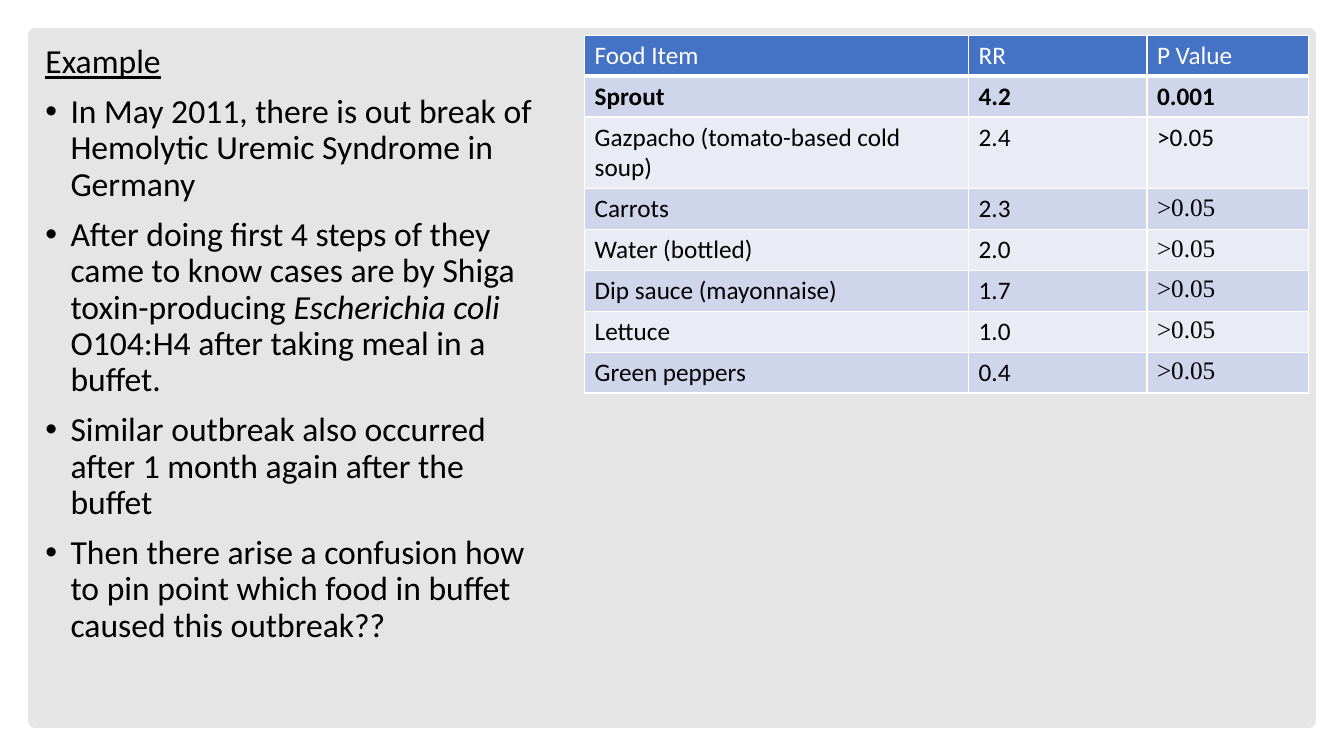
from lxml import etree
from pptx import Presentation
from pptx.dml.color import RGBColor
from pptx.enum.shapes import MSO_SHAPE
from pptx.enum.text import MSO_ANCHOR, MSO_AUTO_SIZE, PP_ALIGN
from pptx.oxml.ns import qn
from pptx.util import Pt

RECTANGLE = MSO_SHAPE.RECTANGLE
TOP, LEFT, NO_FIT = MSO_ANCHOR.TOP, PP_ALIGN.LEFT, MSO_AUTO_SIZE.NONE

# Content
HEADING = "Example"
# Each bullet is a list of (text, italic) runs
BULLETS = [
    [("In May 2011, there is out break of Hemolytic Uremic Syndrome in Germany", False)],
    [("After doing first 4 steps of they came to know cases are by Shiga toxin-producing ", False),
     ("Escherichia coli ", True),
     ("O104:H4 after taking meal in a buffet.", False)],
    [("Similar outbreak also occurred after 1 month again after the buffet", False)],
    [("Then there arise a confusion how to pin point which food in buffet caused this outbreak??", False)],
]
FOOD_TABLE = [
    ("Food Item", "RR", "P Value"),
    ("Sprout", "4.2", "0.001"),
    ("Gazpacho (tomato-based cold soup)", "2.4", ">0.05"),
    ("Carrots", "2.3", ">0.05"),
    ("Water (bottled)", "2.0", ">0.05"),
    ("Dip sauce (mayonnaise)", "1.7", ">0.05"),
    ("Lettuce", "1.0", ">0.05"),
    ("Green peppers", "0.4", ">0.05"),
]
SPROUT_ROW = 1
FIRST_SERIF_ROW = 3  # P values are in the serif font from here down
P_VALUE_COLUMN = 2

# Style
COLORS = {"text": "000000", "white": "FFFFFF", "panel_line": "E7E6E6",
          "header": "4472C4", "band_dark": "CFD5EA", "band_light": "E9EBF5"}
SANS, SERIF = "Calibri", "Times New Roman"

# Layout in points
MARGIN = 25.2
PANEL_WIDTH, PANEL_HEIGHT = 909.6, 489.6
LIST_WIDTH = 373.7
TABLE_LEFT = 417.6
COLUMN_WIDTHS = (274.3, 127.4, 115.6)
ROW_HEIGHT = 29.2
BULLET_INDENT = 18


def color(name):
    return RGBColor.from_string(COLORS[name])


def add_run(paragraph, text, size=24, font=SANS, fill="text",
            bold=False, italic=False, underline=False):
    run = paragraph.add_run()
    run.text = text
    run.font.size, run.font.name = Pt(size), font
    run.font.color.rgb = color(fill)
    run.font.bold, run.font.italic, run.font.underline = bold, italic, underline


def set_bullet(paragraph, character=None):
    properties = paragraph._p.get_or_add_pPr()
    indent = Pt(BULLET_INDENT) if character else 0
    properties.set("marL", str(indent))
    properties.set("indent", str(-indent))
    bullet = etree.SubElement(properties, qn("a:buChar" if character else "a:buNone"))
    if character:
        bullet.set("char", character)


def set_borders(cell, bottom_width):
    properties = cell._tc.get_or_add_tcPr()
    for side, width in (("L", 1), ("R", 1), ("T", 1), ("B", bottom_width)):
        line = etree.SubElement(properties, qn("a:ln" + side), w=str(Pt(width)))
        fill = etree.SubElement(line, qn("a:solidFill"))
        etree.SubElement(fill, qn("a:srgbClr"), val=COLORS["white"])


presentation = Presentation()
presentation.slide_width, presentation.slide_height = Pt(960), Pt(540)
slide = presentation.slides.add_slide(presentation.slide_layouts[1])
title = slide.shapes.title
title._element.getparent().remove(title._element)
body = slide.placeholders[1]

# Grey translucent panel, placed behind the list
panel = slide.shapes.add_shape(RECTANGLE, Pt(MARGIN), Pt(MARGIN), Pt(PANEL_WIDTH), Pt(PANEL_HEIGHT))
panel.shadow.inherit = False
panel.fill.solid()
panel.fill.fore_color.rgb = color("text")
panel_color = panel._element.spPr.find(qn("a:solidFill")).find(qn("a:srgbClr"))
etree.SubElement(panel_color, qn("a:alpha"), val="10000")
panel.line.color.rgb = color("panel_line")
panel.line.width = Pt(10)
body._element.addprevious(panel._element)

# Heading and bullet list
body.left, body.top = Pt(MARGIN), Pt(MARGIN)
body.width, body.height = Pt(LIST_WIDTH), Pt(PANEL_HEIGHT)
frame = body.text_frame
frame.word_wrap, frame.auto_size, frame.vertical_anchor = True, NO_FIT, TOP
heading = frame.paragraphs[0]
set_bullet(heading)
heading.alignment, heading.space_before = LEFT, Pt(0)
add_run(heading, HEADING, underline=True)
for runs in BULLETS:
    paragraph = frame.add_paragraph()
    set_bullet(paragraph, "•")
    paragraph.alignment, paragraph.line_spacing, paragraph.space_before = LEFT, 0.9, Pt(10)
    for text, italic in runs:
        add_run(paragraph, text, italic=italic)

# Food table
table = slide.shapes.add_table(
    len(FOOD_TABLE), len(COLUMN_WIDTHS), Pt(TABLE_LEFT), Pt(MARGIN),
    Pt(sum(COLUMN_WIDTHS)), Pt(ROW_HEIGHT * len(FOOD_TABLE))).table
for column, width in zip(table.columns, COLUMN_WIDTHS):
    column.width = Pt(width)
for row_index, values in enumerate(FOOD_TABLE):
    table.rows[row_index].height = Pt(ROW_HEIGHT)
    is_header = row_index == 0
    band = "header" if is_header else "band_dark" if row_index % 2 else "band_light"
    for column_index, text in enumerate(values):
        cell = table.cell(row_index, column_index)
        set_borders(cell, bottom_width=3 if is_header else 1)
        cell.fill.solid()
        cell.fill.fore_color.rgb = color(band)
        is_serif = column_index == P_VALUE_COLUMN and row_index >= FIRST_SERIF_ROW
        add_run(cell.text_frame.paragraphs[0], text, size=18,
                font=SERIF if is_serif else SANS,
                fill="white" if is_header else "text",
                bold=row_index == SPROUT_ROW)

presentation.save("out.pptx")
